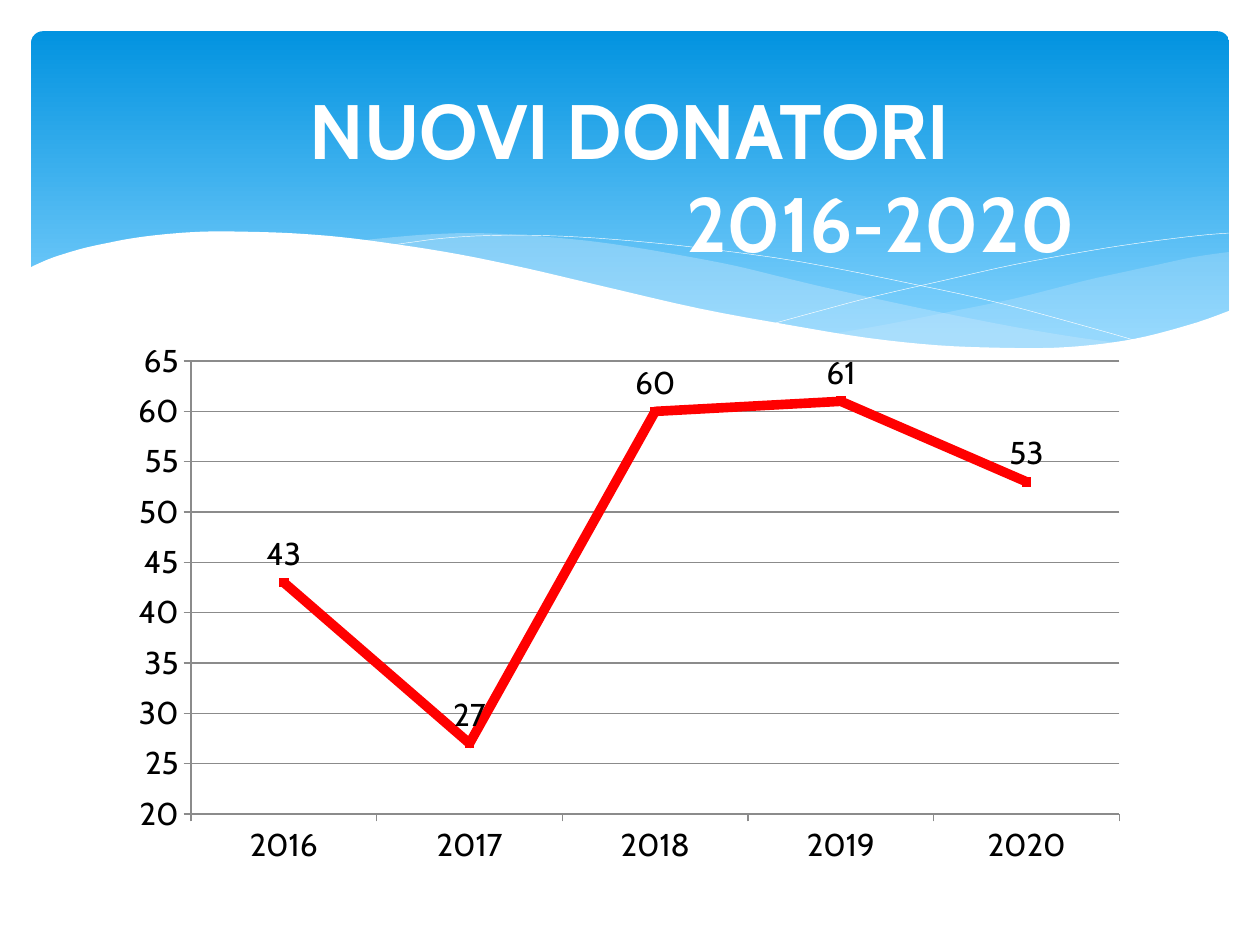
from dataclasses import dataclass

from pptx import Presentation
from pptx.chart.data import CategoryChartData as Data
from pptx.dml.color import RGBColor as Rgb
from pptx.enum.chart import XL_CHART_TYPE as Kind, XL_LABEL_POSITION as Spot
from pptx.enum.chart import XL_MARKER_STYLE as Mark, XL_TICK_MARK as Tick
from pptx.enum.shapes import MSO_SHAPE as Form
from pptx.enum.text import MSO_ANCHOR as Anchor, PP_ALIGN as Align
from pptx.oxml import parse_xml
from pptx.oxml.ns import nsdecls, qn
from pptx.util import Cm, Pt

FONT = "Cabin"
WHITE, PALE, RED, GREY, BLACK = "FFFFFF", "C6E7FC", "FF0000", "8B8B8B", "000000"
Path = list[tuple[float, float]]


@dataclass
class Wave:
    """Smooth curves in cm; a wave without fill is an open white line."""
    curves: list[Path]
    fill: str = ""
    alpha: int = 100


WAVES = [
    Wave([[(24.78, 5.08), (24.08, 5.18), (23.37, 5.33), (22.63, 5.49),
           (21.87, 5.66), (20.45, 6.02), (19.13, 6.29), (17.93, 6.53),
           (16.79, 6.73)],
          [(16.79, 6.73), (17.91, 6.88), (18.92, 6.99), (19.83, 7.04),
           (20.68, 7.06), (21.44, 7.04), (22.15, 6.96), (22.78, 6.86),
           (23.39, 6.73), (23.93, 6.58), (24.46, 6.4), (24.78, 6.27)]],
         PALE, 29),
    Wave([[(22.68, 6.93), (21.77, 6.81), (20.5, 6.6), (18.82, 6.27),
           (16.97, 5.87), (15.98, 5.64), (14.83, 5.36), (13.74, 5.15),
           (12.75, 4.98), (11.81, 4.85), (10.67, 4.75), (9.65, 4.7),
           (8.74, 4.72), (7.95, 4.78), (7.26, 4.85)],
          [(7.26, 4.85), (8.2, 4.98), (9.19, 5.16), (10.26, 5.36),
           (11.4, 5.64), (12.47, 5.89), (14.38, 6.3), (15.7, 6.55),
           (16.89, 6.76), (18.01, 6.91), (19, 7.01), (19.94, 7.06),
           (20.78, 7.06), (21.54, 7.04), (22.25, 6.99), (22.68, 6.93)]],
         PALE, 40),
    Wave([[(7.85, 4.95), (8.33, 4.88), (8.97, 4.8), (9.83, 4.75), (11, 4.75),
           (12.42, 4.83), (14.12, 5), (16.15, 5.28), (18.47, 5.74),
           (20.19, 6.12), (22.07, 6.63), (23.04, 6.91)]]),
    Wave([[(15.57, 6.53), (16.59, 6.25), (17.65, 5.97), (19, 5.66),
           (20.47, 5.33), (22, 5.05), (23.11, 4.88), (24.16, 4.75),
           (24.77, 4.7)]]),
    Wave([[(24.82, 6.25), (24.13, 6.5), (23.11, 6.78), (22.23, 6.93),
           (21.26, 7.01), (20.14, 7.01), (18.9, 6.96), (17.48, 6.81),
           (15.9, 6.55), (14.1, 6.22), (12.07, 5.75), (10.62, 5.41),
           (9.27, 5.13), (8.03, 4.93), (6.88, 4.78), (5.84, 4.7),
           (4.9, 4.67), (4.09, 4.67), (3.35, 4.72), (2.69, 4.8),
           (2.16, 4.9), (1.7, 5), (1.32, 5.11), (1.02, 5.21),
           (0.74, 5.33), (0.58, 5.41)],
          [(0.58, 8.36), (24.82, 8.36)]], WHITE),
]


def tint(code: str) -> Rgb:
    return Rgb.from_string(code)


def smooth(pts: Path, steps: int = 4) -> Path:
    """Run a Catmull-Rom spline through the points."""
    ends = [pts[0], *pts, pts[-1]]
    out = [pts[0]]
    for a, b, c, d in zip(ends, ends[1:], ends[2:], ends[3:]):
        for k in range(1, steps + 1):
            t = k / steps
            out.append(tuple(
                q + t / 2 * (r - p + t * (2 * p - 5 * q + 4 * r - s
                                          + t * (3 * (q - r) + s - p)))
                for p, q, r, s in zip(a, b, c, d)))
    return out


def draw_wave(shapes, wave: Wave) -> None:
    pts = [(Cm(x), Cm(y)) for part in wave.curves for x, y in smooth(part)]
    pen = shapes.build_freeform(*pts[0], scale=1.0)
    pen.add_line_segments(pts[1:], close=bool(wave.fill))
    shape = pen.convert_to_shape()
    shape.shadow.inherit = False
    if not wave.fill:
        shape.fill.background()
        shape.line.color.rgb = tint(WHITE)
        shape.line.width = Pt(0.25)
        return
    shape.line.fill.background()
    shape.fill.solid()
    shape.fill.fore_color.rgb = tint(wave.fill)
    if wave.alpha < 100:
        code = next(shape.element.spPr.iter(qn("a:srgbClr")))
        code.append(parse_xml(
            f'<a:alpha {nsdecls("a")} val="{wave.alpha * 1000}"/>'))


def draw_band(shapes) -> None:
    band = shapes.add_shape(Form.ROUNDED_RECTANGLE, Cm(0.63), Cm(0.63),
                            Cm(24.15), Cm(6.86))
    band.adjustments[0] = 0.034
    band.shadow.inherit = False
    band.line.fill.background()
    band.fill.gradient()
    band.fill.gradient_angle = 270
    stops = band.fill.gradient_stops
    for stop, (place, code) in zip(stops, [(0, "0293E0"), (0.9, "83D3FE")]):
        stop.position = place
        stop.color.rgb = tint(code)


def draw_title(shapes) -> None:
    frame = shapes.add_textbox(Cm(1.27), Cm(0.94), Cm(22.86),
                               Cm(5.18)).text_frame
    frame.word_wrap = True
    frame.vertical_anchor = Anchor.MIDDLE
    frame.text = "NUOVI DONATORI\n2016-2020"
    for para in frame.paragraphs:
        para.alignment = Align.CENTER
        font = para.runs[0].font
        font.name, font.size, font.bold = FONT, Pt(44), True
        font.color.rgb = tint(WHITE)
    years = frame.paragraphs[1]
    years.runs[0].font.language_id = None
    years._p.get_or_add_pPr().set("marL", str(Cm(10.1)))


def fix_plot(chart, x: float, y: float, w: float, h: float) -> None:
    """Place the inner plot area, in parts of the chart's size."""
    area = next(chart.element.iter(qn("c:plotArea")))
    for old in area.findall(qn("c:layout")):
        area.remove(old)
    sides = "".join(f'<c:{tag} val="{val}"/>' for tag, val in
                    [("x", x), ("y", y), ("w", w), ("h", h)])
    area.insert(0, parse_xml(
        f'<c:layout {nsdecls("c")}><c:manualLayout>'
        '<c:layoutTarget val="inner"/><c:xMode val="edge"/>'
        f'<c:yMode val="edge"/>{sides}</c:manualLayout></c:layout>'))


def draw_chart(shapes) -> None:
    data = Data()
    data.categories = [str(year) for year in range(2016, 2021)]
    data.add_series("Series 1", [43, 27, 60, 61, 53])
    chart = shapes.add_chart(Kind.LINE_MARKERS, Cm(2.41), Cm(6.73),
                             Cm(20.57), Cm(11), data).chart
    chart.has_legend = chart.has_title = False
    chart.font.name, chart.font.size = FONT, Pt(18)
    chart.font.color.rgb = tint(BLACK)
    fix_plot(chart, 0.07, 0.05, 0.91, 0.83)

    rise = chart.value_axis
    rise.minimum_scale, rise.maximum_scale, rise.major_unit = 20, 65, 5
    rise.has_major_gridlines = True
    for axis in (rise, chart.category_axis):
        axis.major_tick_mark = Tick.OUTSIDE
    for part in (rise, chart.category_axis, rise.major_gridlines):
        part.format.line.color.rgb = tint(GREY)
        part.format.line.width = Pt(0.75)

    plot = chart.plots[0]
    plot.vary_by_categories = False
    line = plot.series[0]
    line.smooth = False
    line.format.line.color.rgb = tint(RED)
    line.format.line.width = Pt(5.5)
    line.marker.style, line.marker.size = Mark.SQUARE, 5
    line.marker.format.fill.solid()
    line.marker.format.fill.fore_color.rgb = tint(RED)
    line.marker.format.line.color.rgb = tint(RED)
    line.data_labels.show_value = True
    line.data_labels.position = Spot.ABOVE


def main() -> None:
    deck = Presentation()
    deck.slide_width, deck.slide_height = Cm(25.4), Cm(19.05)
    shapes = deck.slides.add_slide(deck.slide_layouts[6]).shapes
    draw_band(shapes)
    for wave in WAVES:
        draw_wave(shapes, wave)
    draw_chart(shapes)
    draw_title(shapes)
    deck.save("out.pptx")


if __name__ == "__main__":
    main()
